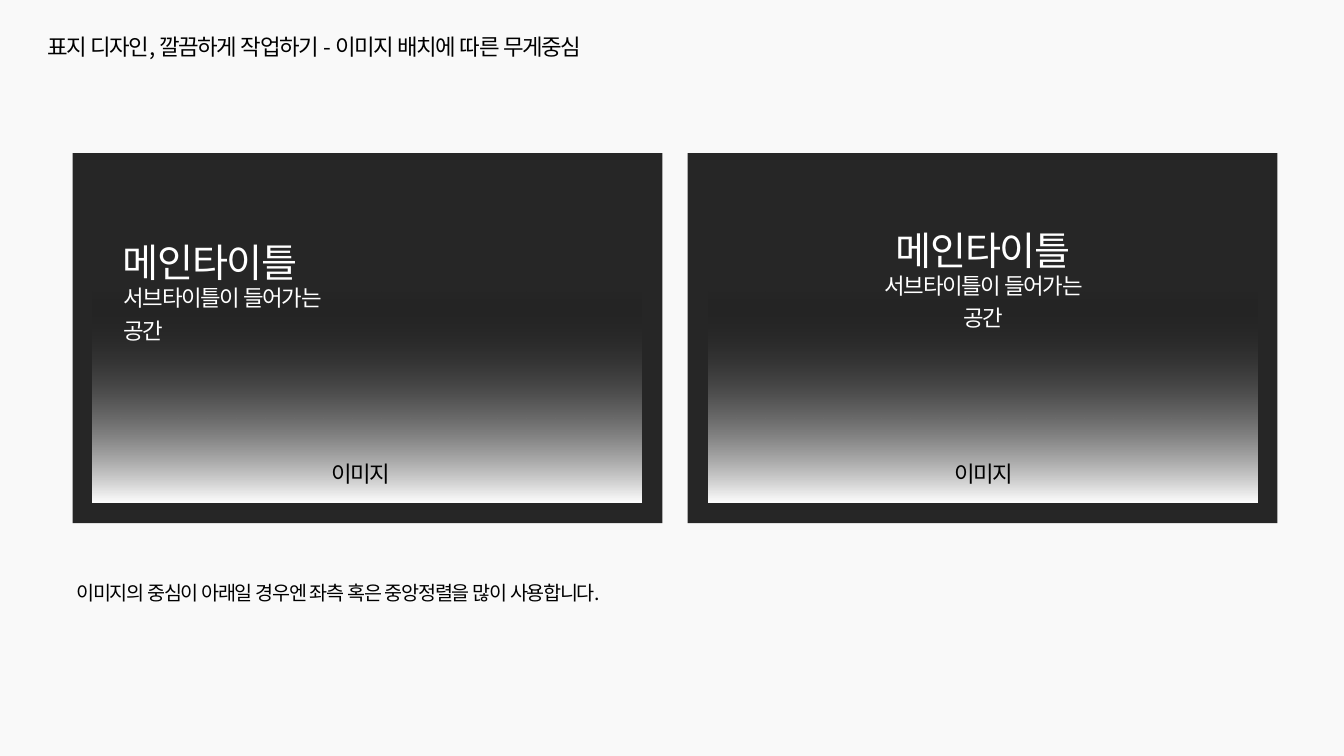
from dataclasses import dataclass

from lxml.etree import SubElement
from pptx import Presentation
from pptx.dml.color import RGBColor
from pptx.enum.lang import MSO_LANGUAGE_ID
from pptx.enum.shapes import MSO_SHAPE
from pptx.enum.text import MSO_ANCHOR, MSO_AUTO_SIZE, PP_ALIGN
from pptx.oxml.ns import qn
from pptx.shapes.autoshape import Shape
from pptx.slide import Slide
from pptx.util import Emu, Pt

EMU_PER_PX = 9144  # 100 px to the inch
FONT = "Noto Sans CJK KR"
PAPER = RGBColor(0xF9, 0xF9, 0xF9)
CHARCOAL = RGBColor(0x26, 0x26, 0x26)
BLACK = RGBColor(0x00, 0x00, 0x00)
WHITE = RGBColor(0xFF, 0xFF, 0xFF)

PANEL_TOP, PANEL_WIDTH, PANEL_HEIGHT = 152, 585, 367
FADE_TOP, FADE_WIDTH, FADE_HEIGHT = 122, 210, 544


@dataclass(frozen=True)
class Box:
    left: int
    top: int
    width: int
    height: int

    def emu(self) -> tuple[Emu, Emu, Emu, Emu]:
        return (px(self.left), px(self.top), px(self.width), px(self.height))


@dataclass(frozen=True)
class Label:
    text: str
    box: Box
    size: int
    color: RGBColor = BLACK
    align: PP_ALIGN = PP_ALIGN.LEFT
    line_spacing: float = 1.0


@dataclass(frozen=True)
class Cover:
    panel_left: int
    fade_left: int
    image_left: int
    title: Box
    subtitle: Box
    align: PP_ALIGN


HEADING = Label("표지 디자인, 깔끔하게 작업하기 - 이미지 배치에 따른 무게중심",
                Box(37, 28, 642, 37), 16)
CAPTION = Label("이미지의 중심이 아래일 경우엔 좌측 혹은 중앙정렬을 많이 사용합니다.",
                Box(66, 564, 854, 41), 14, line_spacing=1.3)
COVERS = [
    Cover(72, 259, 277, Box(112, 222, 252, 58), Box(113, 272, 252, 37), PP_ALIGN.LEFT),
    Cover(682, 870, 895, Box(849, 210, 252, 62), Box(849, 260, 252, 40), PP_ALIGN.CENTER),
]


def px(length: int) -> Emu:
    return Emu(length * EMU_PER_PX)


def write_label(shape: Shape, label: Label) -> None:
    shape.left, shape.top, shape.width, shape.height = label.box.emu()
    frame = shape.text_frame
    frame.word_wrap = True
    frame.auto_size = MSO_AUTO_SIZE.SHAPE_TO_FIT_TEXT
    frame.vertical_anchor = MSO_ANCHOR.TOP
    paragraph = frame.paragraphs[0]
    paragraph.alignment = label.align
    paragraph.line_spacing = label.line_spacing
    run = paragraph.add_run()
    run.text = label.text
    run.font.size = Pt(label.size)
    run.font.name = FONT
    run.font.language_id = MSO_LANGUAGE_ID.KOREAN
    run.font.color.rgb = label.color
    # Tight tracking and the East Asian typeface
    properties = run.font._element
    properties.set("spc", "-100")
    SubElement(properties, qn("a:ea"), typeface=FONT)


def add_label(slide: Slide, label: Label) -> None:
    write_label(slide.shapes.add_textbox(*label.box.emu()), label)


def add_rectangle(slide: Slide, box: Box) -> Shape:
    rectangle = slide.shapes.add_shape(MSO_SHAPE.RECTANGLE, *box.emu())
    rectangle.shadow.inherit = False
    rectangle.line.fill.background()
    return rectangle


def add_fade(slide: Slide, left: int) -> None:
    fade = add_rectangle(slide, Box(left, FADE_TOP, FADE_WIDTH, FADE_HEIGHT))
    fade.rotation = 90
    fade.fill.gradient()
    fade.fill.gradient_angle = 0
    for stop, color in zip(fade.fill.gradient_stops, (BLACK, WHITE)):
        stop.color.rgb = color
    # The black end is fully transparent
    black_end = fade._element.spPr.find(".//" + qn("a:srgbClr"))
    SubElement(black_end, qn("a:alpha"), val="0")


def add_cover(slide: Slide, cover: Cover) -> None:
    panel = add_rectangle(slide, Box(cover.panel_left, PANEL_TOP, PANEL_WIDTH, PANEL_HEIGHT))
    panel.fill.solid()
    panel.fill.fore_color.rgb = CHARCOAL
    add_fade(slide, cover.fade_left)
    add_label(slide, Label("이미지", Box(cover.image_left, 446, 161, 40), 16,
                           BLACK, PP_ALIGN.CENTER, 1.2))
    add_label(slide, Label("메인타이틀", cover.title, 28, WHITE, cover.align, 1.2))
    add_label(slide, Label("서브타이틀이 들어가는 공간", cover.subtitle, 16,
                           WHITE, cover.align, 1.2))


def main() -> None:
    presentation = Presentation()
    presentation.slide_width, presentation.slide_height = px(1333), px(750)
    slide = presentation.slides.add_slide(presentation.slide_layouts.get_by_name("Title Only"))
    slide.background.fill.solid()
    slide.background.fill.fore_color.rgb = PAPER

    # Heading
    write_label(slide.shapes.title, HEADING)

    # Two cover layouts and the remark beneath them
    for cover in COVERS:
        add_cover(slide, cover)
    add_label(slide, CAPTION)

    presentation.save("out.pptx")


if __name__ == "__main__":
    main()
